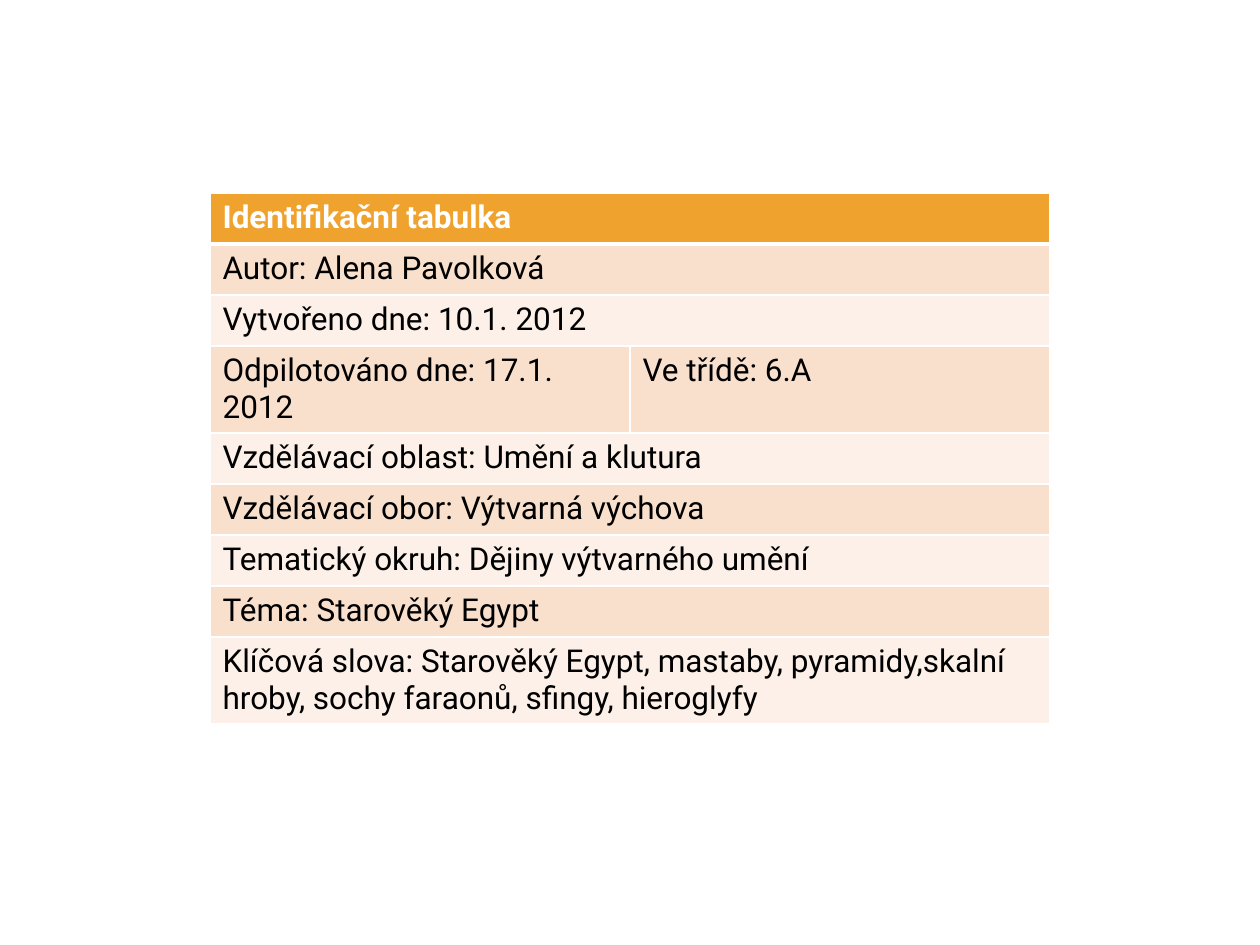
from lxml.etree import SubElement
from pptx import Presentation
from pptx.dml.color import RGBColor as Color
from pptx.oxml.ns import qn
from pptx.util import Pt

COLORS = {
    "header": "F0A22E",
    "dark_band": "F9E0CD",
    "light_band": "FCF0E8",
    "border": "FFFFFF",
    "header_text": "FFFFFF",
    "body_text": "000000",
}
FONT = "Roboto"
COLUMN_WIDTH = 240
ROW_HEIGHT = 29.2
HEADER_RULE = 3

ROWS = [
    ["Identifikační tabulka"],
    ["Autor: Alena Pavolková"],
    ["Vytvořeno dne: 10.1. 2012"],
    ["Odpilotováno dne: 17.1. 2012", "Ve třídě: 6.A"],
    ["Vzdělávací oblast: Umění a klutura"],
    ["Vzdělávací obor: Výtvarná výchova"],
    ["Tematický okruh: Dějiny výtvarného umění"],
    ["Téma: Starověký Egypt"],
    ["Klíčová slova: Starověký Egypt, mastaby, pyramidy,skalní hroby, "
     "sochy faraonů, sfingy, hieroglyfy"],
]


def write_text(frame, text, size=18, color="body_text", bold=False):
    span = frame.paragraphs[0].add_run()
    span.text = text
    span.font.name = FONT
    span.font.size = Pt(size)
    span.font.bold = bold
    span.font.color.rgb = Color.from_string(COLORS[color])


def set_borders(cell, top=1, bottom=1):
    """Draw the four cell borders; widths are in points."""
    properties = cell._tc.get_or_add_tcPr()
    for side, width in (("L", 1), ("R", 1), ("T", top), ("B", bottom)):
        line = SubElement(properties, qn(f"a:ln{side}"), w=str(Pt(width)))
        fill = SubElement(line, qn("a:solidFill"))
        SubElement(fill, qn("a:srgbClr"), val=COLORS["border"])


def fill_cell(cell, color):
    cell.fill.solid()
    cell.fill.fore_color.rgb = Color.from_string(COLORS[color])


def band_color(row_index):
    if row_index == 0:
        return "header"
    return "dark_band" if row_index % 2 else "light_band"


def add_identification_table(page, left, top):
    frame = page.shapes.add_table(
        len(ROWS), 2, Pt(left), Pt(top),
        Pt(2 * COLUMN_WIDTH), Pt(ROW_HEIGHT * len(ROWS)))
    table = frame.table
    for column in table.columns:
        column.width = Pt(COLUMN_WIDTH)
    for index, texts in enumerate(ROWS):
        is_header = index == 0
        table.rows[index].height = Pt(ROW_HEIGHT)
        cells = list(table.rows[index].cells)
        for cell in cells:
            set_borders(cell, top=HEADER_RULE if index == 1 else 1,
                        bottom=HEADER_RULE if is_header else 1)
            fill_cell(cell, band_color(index))
        if len(texts) == 1:
            cells[0].merge(cells[1])
        for cell, text in zip(cells, texts):
            write_text(cell.text_frame, text, bold=is_header,
                       color="header_text" if is_header else "body_text")


def main():
    deck = Presentation()
    deck.slide_width, deck.slide_height = Pt(720), Pt(540)
    page = deck.slides.add_slide(deck.slide_layouts[6])
    add_identification_table(page, left=120, top=110.25)
    deck.save("out.pptx")


if __name__ == "__main__":
    main()
